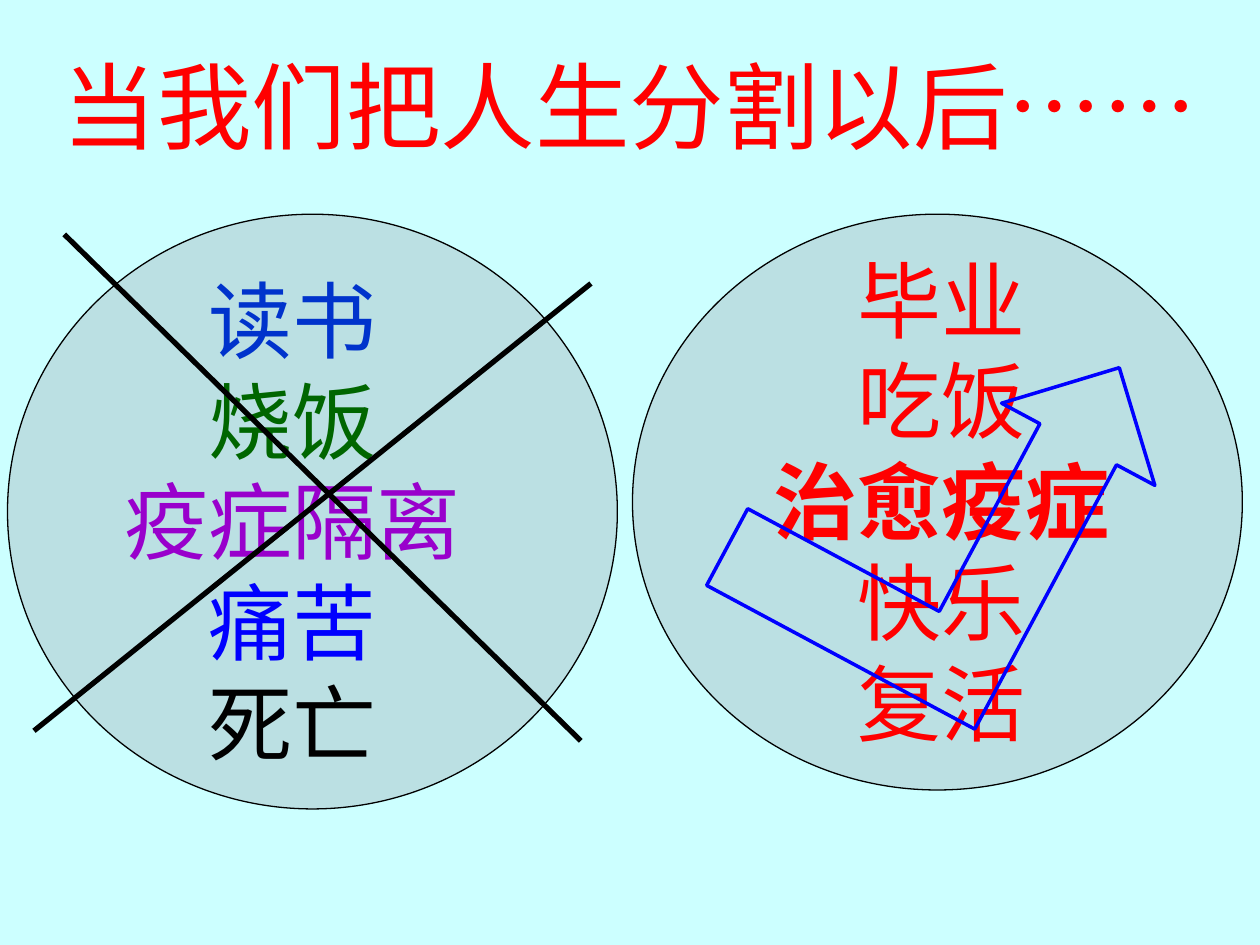
from pptx import Presentation
from pptx.dml.color import RGBColor
from pptx.enum.shapes import MSO_CONNECTOR, MSO_SHAPE
from pptx.enum.text import PP_ALIGN
from pptx.oxml.ns import qn
from pptx.util import Inches, Pt

ELLIPSE = MSO_SHAPE.OVAL
BENT_ARROW = MSO_SHAPE.BENT_UP_ARROW
STRAIGHT = MSO_CONNECTOR.STRAIGHT
CENTER = PP_ALIGN.CENTER

FONT = "Noto Sans CJK SC"
COLORS = {
    "background": "CCFFFF",
    "circle": "BBE0E3",
    "black": "000000",
    "red": "FF0000",
    "navy": "0033CC",
    "green": "006600",
    "purple": "9900CC",
    "blue": "0000FF",
}

presentation = Presentation()
presentation.slide_width = Inches(10)
presentation.slide_height = Inches(7.5)
COLUMN = presentation.slide_width / 100
ROW = presentation.slide_height / 75


def grid(*lengths):
    return [round(length * unit) for length, unit in zip(lengths, (COLUMN, ROW) * 2)]


def add_text(box, lines, size, spacing=None):
    frame = slide.shapes.add_textbox(*grid(*box)).text_frame
    frame.word_wrap = True
    for index, (text, color, bold) in enumerate(lines):
        paragraph = frame.paragraphs[0] if index == 0 else frame.add_paragraph()
        paragraph.alignment = CENTER
        if spacing:
            paragraph.line_spacing = Pt(spacing)
        run = paragraph.add_run()
        run.text = text
        run.font.size = Pt(size)
        run.font.bold = bold
        run.font.color.rgb = RGBColor.from_string(COLORS[color])
        run.font.name = FONT
        properties = run.font._element
        east_asian = properties.makeelement(qn("a:ea"), {"typeface": FONT})
        properties.find(qn("a:latin")).addnext(east_asian)


slide = presentation.slides.add_slide(presentation.slide_layouts[6])
slide.background.fill.solid()
slide.background.fill.fore_color.rgb = RGBColor.from_string(COLORS["background"])

add_text((0, 3.3, 100, 12), [("当我们把人生分割以后……", "red", False)], 54)

for left, height in ((0.6, 47.2), (50.2, 45.7)):
    circle = slide.shapes.add_shape(ELLIPSE, *grid(left, 17, 48.4, height))
    circle.shadow.inherit = False
    circle.fill.solid()
    circle.fill.fore_color.rgb = RGBColor.from_string(COLORS["circle"])
    circle.line.color.rgb = RGBColor.from_string(COLORS["black"])
    circle.line.width = Pt(0.75)

struggles = [
    ("读书", "navy", False),
    ("烧饭", "green", False),
    ("疫症隔离", "purple", False),
    ("痛苦", "blue", False),
    ("死亡", "black", False),
]
rewards = [
    (word, "red", word == "治愈疫症")
    for word in ("毕业", "吃饭", "治愈疫症", "快乐", "复活")
]
add_text((7.5, 20.8, 31.5, 41.4), struggles, 48, spacing=57.6)
add_text((59.4, 19.2, 30.7, 41.4), rewards, 48, spacing=57.6)

for ends in ((2.7, 58, 46.9, 22.5), (5.1, 18.6, 46.1, 58.8)):
    cross_line = slide.shapes.add_connector(STRAIGHT, *grid(*ends))
    cross_line.line.color.rgb = RGBColor.from_string(COLORS["black"])
    cross_line.line.width = Pt(3)
    line_properties = cross_line._element.spPr
    line_properties.append(line_properties.makeelement(qn("a:effectLst"), {}))

arrow = slide.shapes.add_shape(BENT_ARROW, *grid(61.7, 24.1, 27.6, 30.7))
arrow.shadow.inherit = False
arrow.rotation = 28.2
arrow.fill.background()
arrow.line.color.rgb = RGBColor.from_string(COLORS["blue"])
arrow.line.width = Pt(2)

presentation.save("out.pptx")
